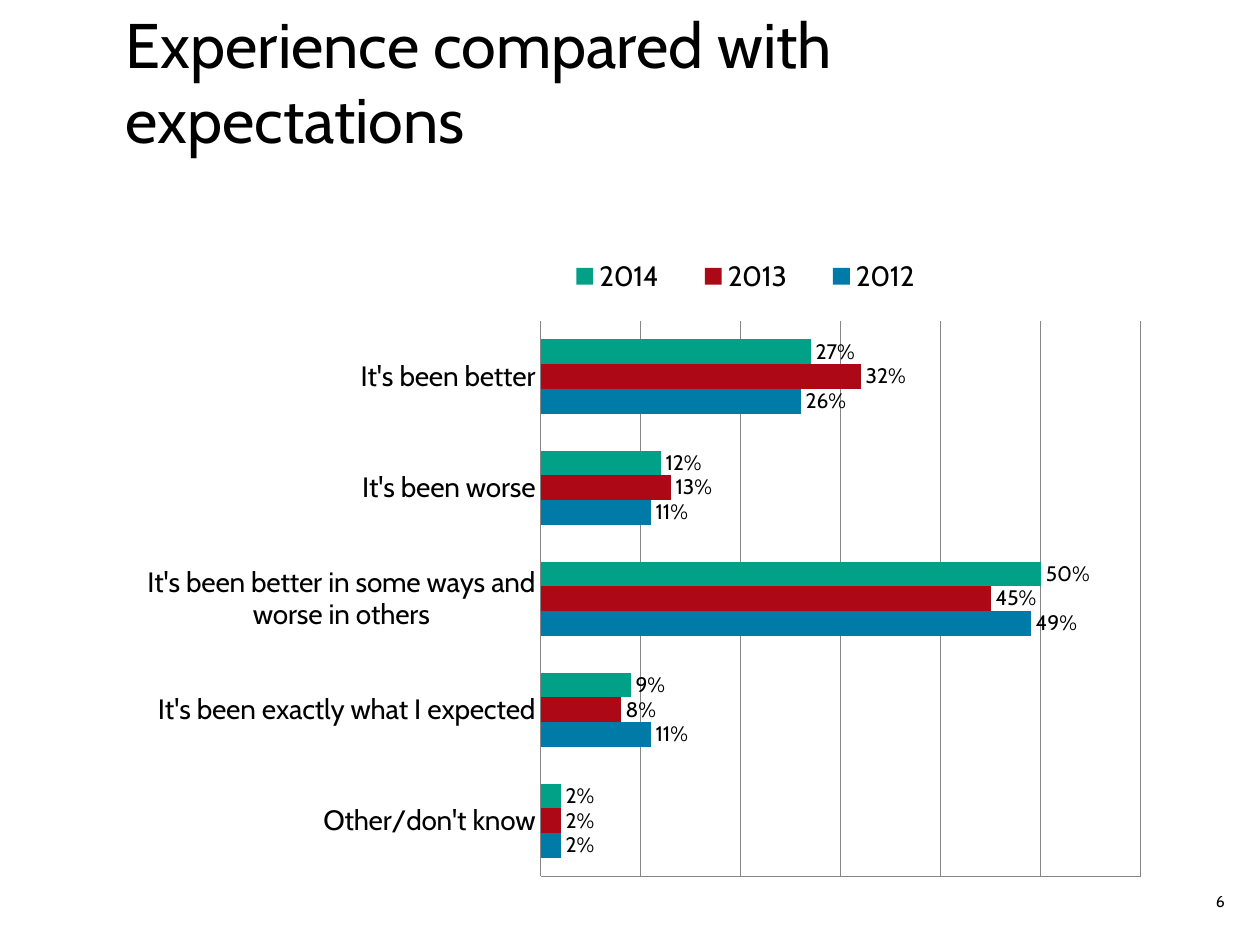
from lxml.etree import SubElement as Sub
from pptx import Presentation
from pptx.chart.data import CategoryChartData as Data
from pptx.dml.color import RGBColor as Rgb
from pptx.enum.chart import XL_CHART_TYPE as Kind
from pptx.enum.chart import XL_LABEL_POSITION as Spot
from pptx.enum.chart import XL_LEGEND_POSITION as Side
from pptx.enum.chart import XL_TICK_LABEL_POSITION as Label
from pptx.enum.chart import XL_TICK_MARK as Tick
from pptx.enum.text import MSO_ANCHOR as Anchor
from pptx.enum.text import PP_ALIGN as Align
from pptx.oxml.ns import qn
from pptx.util import Inches, Pt

FACE = "Cabin"
HUES = {
    "ink": "000000",
    "grid": "868686",
    "2012": "007AA6",
    "2013": "AD0816",
    "2014": "00A186",
}
CATS = [
    "Other/don't know",
    "It's been exactly what I expected",
    "It's been better in some ways and worse in others",
    "It's been worse",
    "It's been better",
]
YEARS = {
    "2012": (0.02, 0.11, 0.49, 0.11, 0.26),
    "2013": (0.02, 0.08, 0.45, 0.13, 0.32),
    "2014": (0.02, 0.09, 0.5, 0.12, 0.27),
}


def hue(name):
    return Rgb.from_string(HUES[name])


def style(font, size):
    font.name = FACE
    font.size = Pt(size)
    font.bold = False
    font.color.rgb = hue("ink")


def add_text(slide, box, text, size, align=Align.LEFT, anchor=Anchor.MIDDLE, right=0.1):
    frame = slide.shapes.add_textbox(*map(Inches, box)).text_frame
    frame.word_wrap = True
    frame.vertical_anchor = anchor
    frame.margin_right = Inches(right)
    para = frame.paragraphs[0]
    para.alignment = align
    run = para.add_run()
    run.text = text
    style(run.font, size)


def lay_out(part, index, box, inner=False):
    for old in part.findall(qn("c:layout")):
        part.remove(old)
    layout = part.makeelement(qn("c:layout"))
    part.insert(index, layout)
    manual = Sub(layout, qn("c:manualLayout"))
    rules = [("layoutTarget", "inner")] if inner else []
    rules += [("xMode", "edge"), ("yMode", "edge"), *zip("xywh", box)]
    for tag, val in rules:
        Sub(manual, qn(f"c:{tag}")).set("val", str(val))


def draw_line(line):
    line.color.rgb = hue("grid")
    line.width = Pt(0.75)


def set_axes(chart):
    cat, val = chart.category_axis, chart.value_axis
    for axis in (cat, val):
        axis.major_tick_mark = axis.minor_tick_mark = Tick.NONE
        draw_line(axis.format.line)
    cat.has_major_gridlines = False
    style(cat.tick_labels.font, 16)
    val.minimum_scale, val.maximum_scale, val.major_unit = 0, 0.6, 0.1
    val.tick_label_position = Label.NONE
    val.has_major_gridlines = True
    draw_line(val.major_gridlines.format.line)


def set_bars(plot):
    plot.gap_width = 150
    plot.overlap = 0
    plot.vary_by_categories = False
    for bars in plot.series:
        bars.format.fill.solid()
        bars.format.fill.fore_color.rgb = hue(bars.name)
        tags = bars.data_labels
        tags.show_value = True
        tags.position = Spot.OUTSIDE_END
        tags.number_format = "0%"
        tags.number_format_is_linked = False
        style(tags.font, 12)


def add_bars(slide, box):
    data = Data(number_format="0%")
    data.categories = CATS
    for year, vals in YEARS.items():
        data.add_series(year, vals)
    frame = slide.shapes.add_chart(Kind.BAR_CLUSTERED, *map(Inches, box), data)
    chart = frame.chart
    chart.has_title = False
    style(chart.font, 10)
    set_axes(chart)
    set_bars(chart.plots[0])
    chart.has_legend = True
    legend = chart.legend
    legend.position = Side.RIGHT
    legend.include_in_layout = False
    style(legend.font, 16)
    root = chart.element
    lay_out(root.find(".//" + qn("c:plotArea")), 0, (0.42, 0.16, 0.55, 0.81), True)
    lay_out(root.find(".//" + qn("c:legend")), 1, (0.42, 0.05, 0.38, 0.08))
    area = root.find(".//" + qn("c:plotArea")).find(".//" + qn("c:manualLayout"))
    for tag, val in zip("xywh", (0.421, 0.155, 0.554, 0.806)):
        area.find(qn(f"c:{tag}")).set("val", str(val))


def main():
    deck = Presentation()
    deck.slide_width, deck.slide_height = Inches(10), Inches(7.5)
    slide = deck.slides.add_slide(deck.slide_layouts[6])
    title = "Experience compared with expectations"
    add_text(slide, (0.9, 0.52, 8.58, 0.77), title, 36, anchor=Anchor.BOTTOM)
    add_bars(slide, (0.67, 1.7, 8.6, 5.47))
    add_text(slide, (9.25, 6.95, 0.47, 0.4), "6", 9, align=Align.RIGHT, right=0)
    deck.save("out.pptx")


if __name__ == "__main__":
    main()
